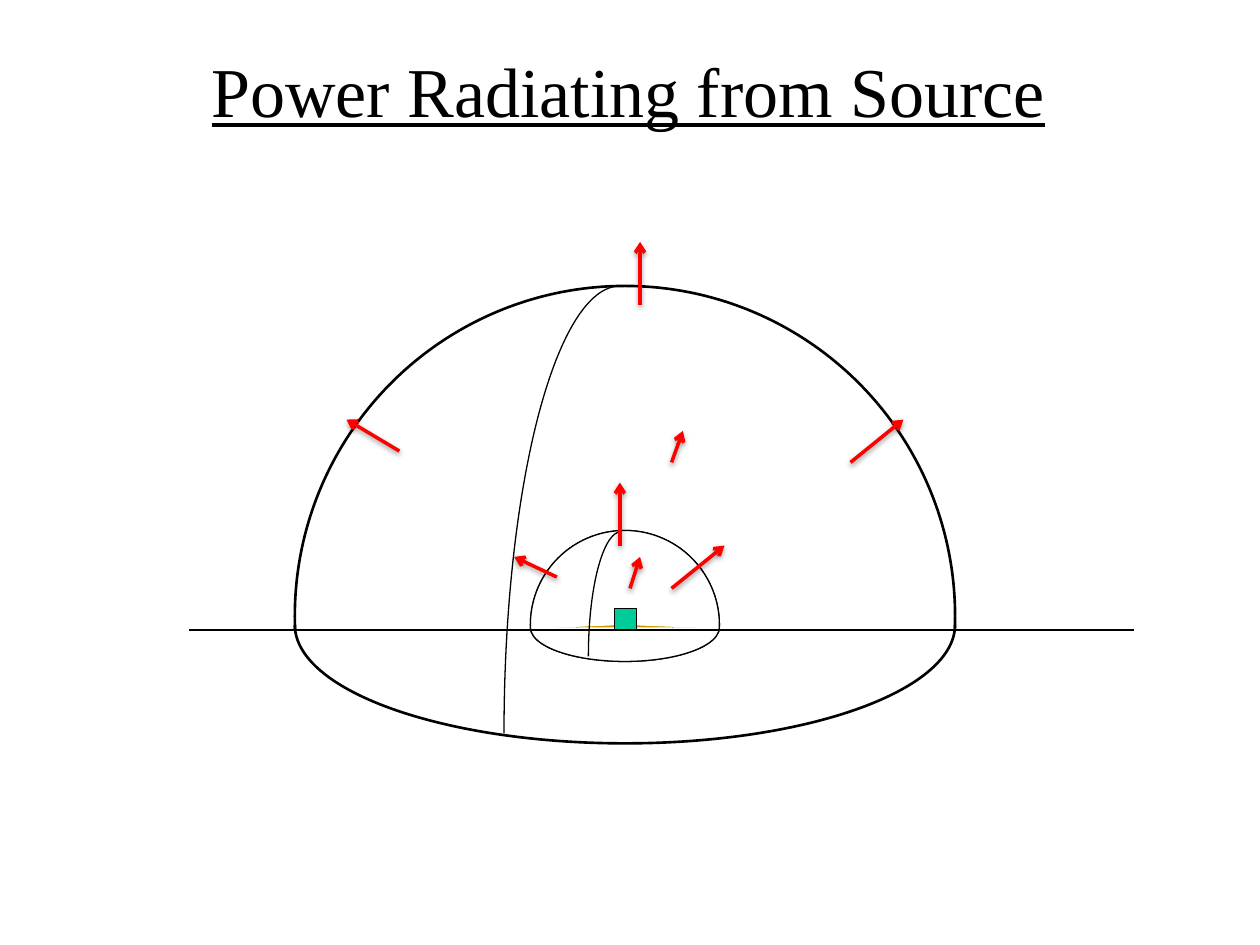
import copy
import math

import pptx
import pptx.dml.color
import pptx.enum.shapes
import pptx.enum.text
import pptx.oxml
import pptx.oxml.ns
import pptx.util

TITLE = "Power Radiating from Source"
FONT = "Times New Roman"
BLACK, RED, GREEN, WHITE = "000000", "FF0000", "00CC99", "FFFFFF"
ORANGE, OCHRE = "FF9900", "CC9900"
MIDDLE = 4.96
NAMESPACE = pptx.oxml.ns.nsdecls("a")

# Arcs, back to front: centre x, centre y, radius x, radius y,
# first angle, last angle (degrees, clockwise from the right), fill, line width
ARCS = [
    (MIDDLE, 4.89, 2.62, 2.62, 2.2, -182.2, None, 1.5),      # large dome
    (MIDDLE, 4.96, 2.62, 0.94, 180, 0, None, 1.5),           # large base
    (MIDDLE, 4.96, 0.75, 0.75, 2.3, -182.3, ORANGE, 0.75),
    (MIDDLE, 4.98, 0.75, 0.27, 180, 0, ORANGE, 0.75),
    (MIDDLE, 4.98, 0.38, 0.38, 1.5, -181.5, OCHRE, 0.75),
    (MIDDLE, 4.99, 0.38, 0.13, 180, 0, OCHRE, 0.75),
    (MIDDLE, 4.96, 0.75, 0.75, 2.3, -182.3, WHITE, 0.75),    # small dome
    (MIDDLE, 4.98, 0.75, 0.27, 180, 0, WHITE, 0.75),         # small base
    (4.92, 5.82, 0.92, 3.55, -90, -180, None, 0.75),         # large meridian
    (4.93, 5.21, 0.26, 0.99, -90, -180, None, 0.75),         # small meridian
]

# Radiated power: start and end of each arrow
ARROWS = [
    ((5.33, 4.67), (5.75, 4.33)),
    ((4.92, 4.33), (4.92, 3.83)),
    ((4.42, 4.58), (4.08, 4.42)),
    ((5, 4.67), (5.08, 4.42)),
    ((6.75, 3.67), (7.17, 3.33)),
    ((3.17, 3.58), (2.75, 3.33)),
    ((5.33, 3.67), (5.42, 3.42)),
    ((5.08, 2.42), (5.08, 1.92)),
]

SHADOW = (
    '<a:outerShdw blurRad="39370" dist="20320" dir="5400000" rotWithShape="0">'
    '<a:srgbClr val="000000"><a:alpha val="38000"/></a:srgbClr></a:outerShdw>'
)


def color(value):
    return pptx.dml.color.RGBColor.from_string(value)


def inches(*values):
    return [pptx.util.Inches(value) for value in values]


def paint(shape, fill, width):
    shape.shadow.inherit = False
    if fill:
        shape.fill.solid()
        shape.fill.fore_color.rgb = color(fill)
    else:
        shape.fill.background()
    shape.line.color.rgb = color(BLACK)
    shape.line.width = pptx.util.Pt(width)


def add_arc(page, x, y, radius_x, radius_y, first, last, fill, width):
    # The ends, the extremes between them and the centre set the frame
    extremes = [angle for angle in (90, 0, -90, -180) if last < angle < first]
    angles = [math.radians(angle) for angle in [first, *extremes, last]]
    points = [inches(x + radius_x * math.cos(a), y + radius_y * math.sin(a)) for a in angles]
    builder = page.shapes.build_freeform(*points[0])
    builder.add_line_segments(points[1:] + [inches(x, y)], close=True)
    arc = builder.convert_to_shape()
    paint(arc, fill, width)

    # One true curve replaces the straight segments up to the last end
    outline = arc.element.find(".//" + pptx.oxml.ns.qn("a:path"))
    move, *segments, _, _ = list(outline)
    for segment in segments:
        outline.remove(segment)
    radii = inches(radius_x, radius_y)
    move.addnext(pptx.oxml.parse_xml(
        f'<a:arcTo {NAMESPACE} wR="{radii[0]}" hR="{radii[1]}" '
        f'stAng="{round(first % 360 * 60000)}" swAng="{round((last - first) * 60000)}"/>'))

    # The sector carries the fill, the open curve carries the outline
    sector = copy.deepcopy(outline)
    sector.set("stroke", "0")
    outline.addnext(sector)
    outline.set("fill", "none")
    for part in list(outline)[-2:]:
        outline.remove(part)


def add_line(page, start, end, line_color, width, effect=""):
    line = page.shapes.add_connector(
        pptx.enum.shapes.MSO_CONNECTOR.STRAIGHT, *inches(*start, *end))
    line.line.color.rgb = color(line_color)
    line.line.width = pptx.util.Pt(width)
    line.element.spPr.append(
        pptx.oxml.parse_xml(f"<a:effectLst {NAMESPACE}>{effect}</a:effectLst>"))
    return line


def add_arrow(page, start, end):
    arrow = add_line(page, start, end, RED, 2, SHADOW)
    outline = arrow.element.spPr.find(pptx.oxml.ns.qn("a:ln"))
    outline.append(pptx.oxml.parse_xml(f'<a:tailEnd {NAMESPACE} type="arrow"/>'))


def add_title(page):
    box = page.shapes.add_textbox(*inches(1.54, 0.33, 6.89, 0.77))
    frame = box.text_frame
    frame.text = TITLE
    frame.word_wrap = False
    frame.auto_size = pptx.enum.text.MSO_AUTO_SIZE.SHAPE_TO_FIT_TEXT
    para = frame.paragraphs[0]
    para.alignment = pptx.enum.text.PP_ALIGN.CENTER
    font = para.runs[0].font
    font.name, font.size, font.underline = FONT, pptx.util.Pt(40), True
    font.color.rgb = color(BLACK)


def main():
    deck = pptx.Presentation()
    deck.slide_width, deck.slide_height = inches(10, 7.5)
    page = deck.slides.add_slide(deck.slide_layouts[6])

    # Hemispheres
    for arc in ARCS:
        add_arc(page, *arc)

    # Source on the ground line
    source = page.shapes.add_shape(
        pptx.enum.shapes.MSO_SHAPE.RECTANGLE, *inches(4.88, 4.83, 0.17, 0.17))
    paint(source, GREEN, 0.75)
    add_line(page, (1.5, 5), (9, 5), BLACK, 0.75)

    for start, end in ARROWS:
        add_arrow(page, start, end)
    add_title(page)
    deck.save("out.pptx")


if __name__ == "__main__":
    main()
